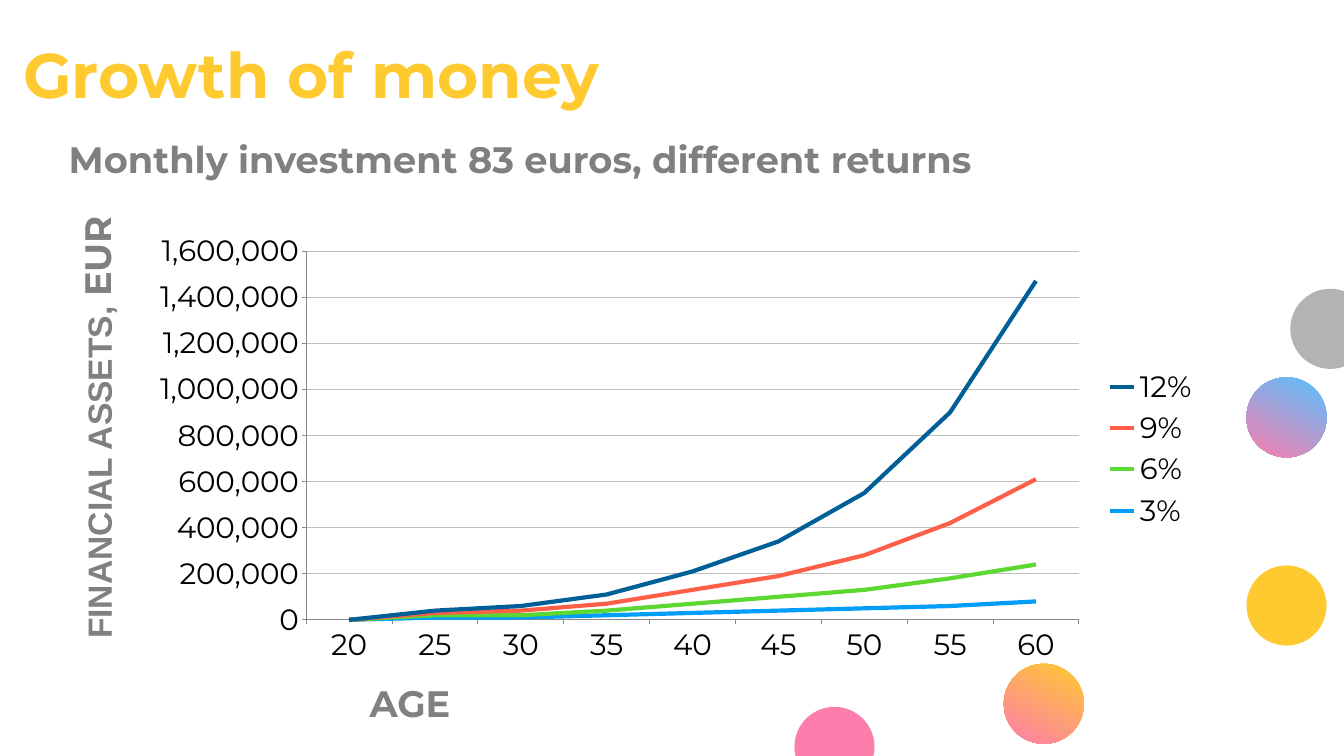
from lxml.etree import SubElement
from pptx import Presentation
from pptx.chart.data import CategoryChartData
from pptx.dml.color import RGBColor
from pptx.enum.chart import XL_CHART_TYPE as ChartType, XL_LEGEND_POSITION as LegendPosition
from pptx.enum.chart import XL_TICK_MARK as TickMark
from pptx.enum.shapes import MSO_SHAPE as Preset
from pptx.enum.text import MSO_ANCHOR as Anchor
from pptx.oxml.ns import qn
from pptx.util import Inches, Pt

FONT = "Montserrat"
YELLOW, PINK, BLUE, GRAY = "FECA30", "FD7DAC", "56C1FF", "808080"
DOT_SIZE = 1.06
DOTS = [
    (17.07, 3.82, ["B3B3B3"]),
    (16.49, 7.48, [YELLOW]),
    (10.51, 9.35, [PINK]),
    (16.49, 4.99, [BLUE, PINK]),
    (13.28, 8.78, [YELLOW, PINK]),
]
AGES = [str(age) for age in range(20, 61, 5)]
RETURNS = [
    ("3%", "009EF9", [0, 10, 10, 20, 30, 40, 50, 60, 80]),
    ("6%", "5DD731", [0, 10, 10, 20, 40, 60, 80, 120, 160]),
    ("9%", "FE5F48", [0, 10, 20, 30, 60, 90, 150, 240, 370]),
    ("12%", "005F96", [0, 10, 20, 40, 80, 150, 270, 480, 860]),
]


def color(value):
    return RGBColor.from_string(value)


def add_run(paragraph, text, size, fill=GRAY, font=FONT):
    run = paragraph.add_run()
    run.text = text
    run.font.name = font
    run.font.size = Pt(size)
    run.font.bold = True
    run.font.color.rgb = color(fill)


def add_label(slide, box, runs, rotation=0):
    label = slide.shapes.add_textbox(*map(Inches, box))
    label.rotation = rotation
    frame = label.text_frame
    frame.word_wrap = True
    frame.vertical_anchor = Anchor.MIDDLE
    for run in runs:
        add_run(frame.paragraphs[0], **run)


def add_heading(slide, box, title, subtitle):
    heading = slide.shapes.add_textbox(*map(Inches, box))
    frame = heading.text_frame
    frame.word_wrap = True
    frame.margin_left = frame.margin_right = Inches(0.05)
    frame.margin_top = frame.margin_bottom = Inches(0.05)
    add_run(frame.paragraphs[0], title, 60, YELLOW)
    second = frame.add_paragraph()
    second.space_before = Pt(24)
    second._p.get_or_add_pPr().set("marL", str(Inches(0.6)))
    add_run(second, subtitle, 35)


def add_dot(slide, left, top, colors):
    box = (left, top, DOT_SIZE, DOT_SIZE)
    dot = slide.shapes.add_shape(Preset.OVAL, *map(Inches, box))
    dot.shadow.inherit = False
    dot.line.fill.background()
    if len(colors) == 1:
        dot.fill.solid()
        dot.fill.fore_color.rgb = color(colors[0])
        return
    dot.fill.gradient()
    dot.fill.gradient_angle = 242
    for stop, value in zip(dot.fill.gradient_stops, colors):
        stop.color.rgb = color(value)


def set_plot_area(chart, **fractions):
    area = chart._chartSpace.chart.plotArea
    layout = area.find(qn("c:layout"))
    if layout is None:
        layout = SubElement(area, qn("c:layout"))
        area.insert(0, layout)
    manual = SubElement(layout, qn("c:manualLayout"))
    settings = {"layoutTarget": "inner", "xMode": "edge", "yMode": "edge", **fractions}
    for tag, value in settings.items():
        SubElement(manual, qn(f"c:{tag}")).set("val", str(value))


def add_growth_chart(slide, box):
    data = CategoryChartData(number_format="#,##0")
    data.categories = AGES
    for name, _, thousands in RETURNS:
        data.add_series(name, [value * 1000 for value in thousands])
    chart = slide.shapes.add_chart(ChartType.LINE_STACKED, *map(Inches, box), data).chart
    chart.has_title = False
    chart.font.name = FONT
    chart.font.size = Pt(28)
    chart.font.color.rgb = color("000000")
    chart.has_legend = True
    chart.legend.position = LegendPosition.RIGHT
    chart.legend.include_in_layout = False
    set_plot_area(chart, x=0.157, y=0.059, w=0.723, h=0.823)

    for axis in (chart.category_axis, chart.value_axis):
        axis.major_tick_mark = TickMark.OUTSIDE
        axis.format.line.color.rgb = color("888888")
        axis.format.line.width = Pt(0.75)
    assets = chart.value_axis
    assets.minimum_scale = 0
    assets.maximum_scale = 1600000
    assets.major_unit = 200000
    assets.tick_labels.number_format = "#,##0"
    assets.tick_labels.number_format_is_linked = False
    assets.major_gridlines.format.line.color.rgb = color("BFBFBF")
    assets.major_gridlines.format.line.width = Pt(0.75)

    chart.plots[0].vary_by_categories = False
    for series, (_, stroke, _) in zip(chart.plots[0].series, RETURNS):
        series.smooth = False
        series.format.line.color.rgb = color(stroke)
        series.format.line.width = Pt(4)


def main():
    deck = Presentation()
    deck.slide_width = Inches(17.78)
    deck.slide_height = Inches(10)
    slide = deck.slides.add_slide(deck.slide_layouts[6])
    for left, top, colors in DOTS:
        add_dot(slide, left, top, colors)
    add_heading(slide, (0.26, 0.42, 16.66, 2.1), "Growth of money",
                "Monthly investment 83 euros, different returns")
    add_growth_chart(slide, (1.83, 2.97, 14.14, 5.93))
    add_label(slide, (4.79, 9, 6.23, 0.6), [dict(text="AGE", size=35)])
    add_label(slide, (-1.68, 5.29, 5.93, 0.59),
              [dict(text="FINANCIAL ASSETS, ", size=32, font="Arial"),
               dict(text="EUR", size=35)], rotation=270)
    deck.save("out.pptx")


if __name__ == "__main__":
    main()
